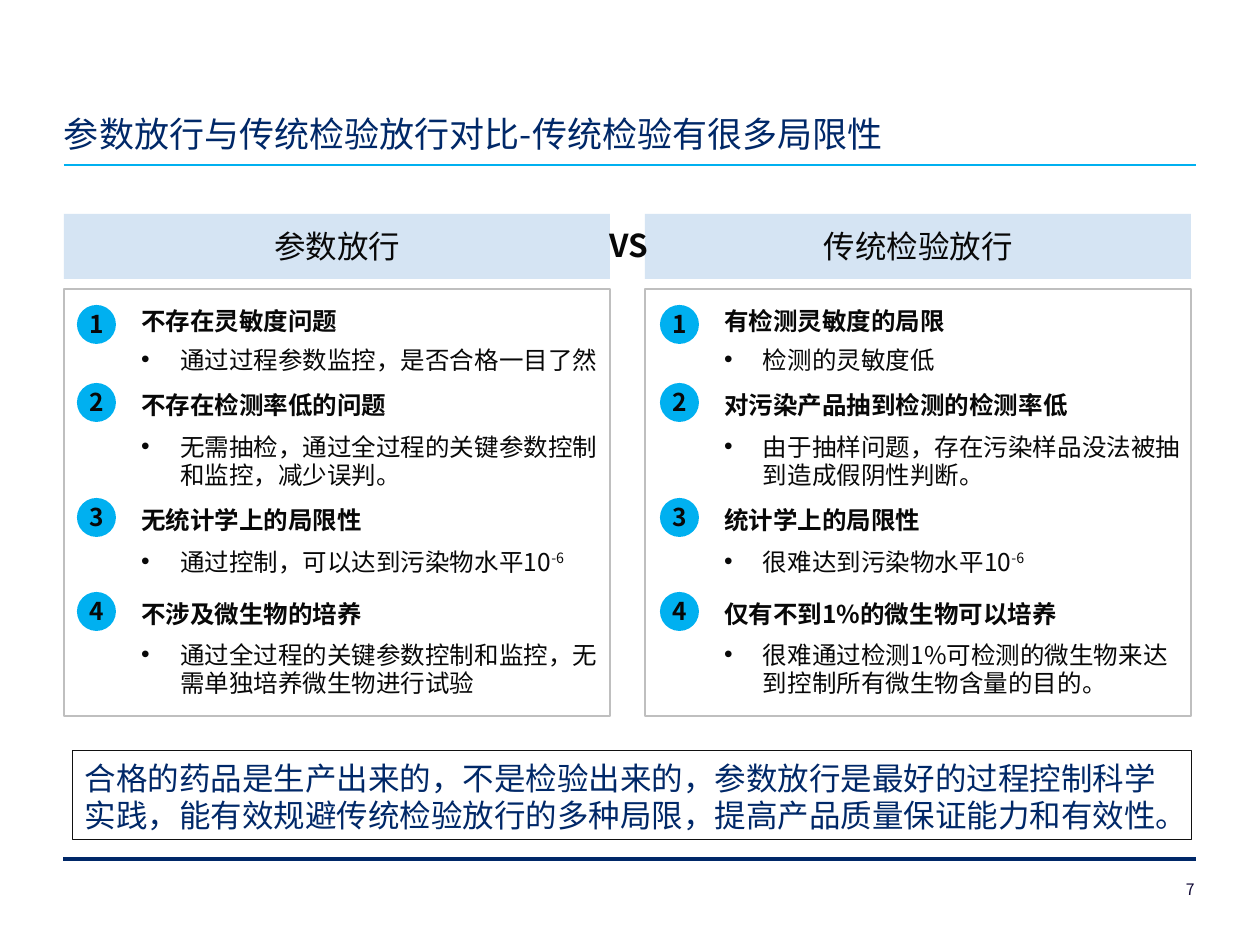
from lxml import etree
from pptx import Presentation
from pptx import util as u
from pptx.dml.color import RGBColor
from pptx.enum import shapes, text
from pptx.oxml.ns import qn

FONT = "Noto Sans CJK SC"
NAVY, CYAN, PALE, GREY, INK = "002868", "00B0F0", "D5E4F3", "BFBFBF", "080808"
TITLE = "参数放行与传统检验放行对比-传统检验有很多局限性"
CLAIM = ("合格的药品是生产出来的，不是检验出来的，参数放行是最好的过程控制科学实践，"
         "能有效规避传统检验放行的多种局限，提高产品质量保证能力和有效性。")

# Each point: heading, detail, superscript
SIDES = [
    ("参数放行", [
        ("不存在灵敏度问题", "通过过程参数监控，是否合格一目了然", ""),
        ("不存在检测率低的问题", "无需抽检，通过全过程的关键参数控制和监控，减少误判。", ""),
        ("无统计学上的局限性", "通过控制，可以达到污染物水平10", "-6"),
        ("不涉及微生物的培养", "通过全过程的关键参数控制和监控，无需单独培养微生物进行试验", ""),
    ]),
    ("传统检验放行", [
        ("有检测灵敏度的局限", "检测的灵敏度低", ""),
        ("对污染产品抽到检测的检测率低", "由于抽样问题，存在污染样品没法被抽到造成假阴性判断。", ""),
        ("统计学上的局限性", "很难达到污染物水平10", "-6"),
        ("仅有不到1%的微生物可以培养", "很难通过检测1%可检测的微生物来达到控制所有微生物含量的目的。", ""),
    ]),
]
BOXES = [64, 645]
BADGES = [77, 660]
# Tops of badge, heading and detail, then height of detail
ROWS = [(305, 294, 336, 47), (383, 378, 423, 69), (498, 493, 538, 49), (592, 587, 631, 59)]
WIDE, INDENT = 546, 39
LEFT, MID = text.PP_ALIGN.LEFT, text.PP_ALIGN.CENTER
TOP, CENTRE, BASE = text.MSO_ANCHOR.TOP, text.MSO_ANCHOR.MIDDLE, text.MSO_ANCHOR.BOTTOM
RECT, OVAL = shapes.MSO_SHAPE.RECTANGLE, shapes.MSO_SHAPE.OVAL


def px(n):
    return u.Emu(round(n * 914400 / 126))


def rgb(code):
    return RGBColor.from_string(code)


def write(shape, words, size=14, color=INK, bold=False, align=LEFT, anchor=CENTRE,
          pads=(5, 5, 5, 5), wrap=True, bullet=False, sup=""):
    frame = shape.text_frame
    form = dict(zip(("margin_left", "margin_top", "margin_right", "margin_bottom"),
                    map(px, pads)))
    form.update(word_wrap=wrap, vertical_anchor=anchor, auto_size=text.MSO_AUTO_SIZE.NONE)
    for key, value in form.items():
        setattr(frame, key, value)
    para = frame.paragraphs[0]
    if bullet:
        props = para._p.get_or_add_pPr()
        props.set("marL", str(px(INDENT)))
        props.set("indent", str(-px(INDENT)))
        etree.SubElement(props, qn("a:buFont")).set("typeface", "Arial")
        etree.SubElement(props, qn("a:buChar")).set("char", "•")
    para.alignment = align
    para.line_spacing = u.Pt(round(size * 1.15, 1))
    for part in filter(None, (words, sup)):
        run = para.add_run()
        run.text = part
        for key, value in dict(name=FONT, size=u.Pt(size), bold=bold).items():
            setattr(run.font, key, value)
        run.font.color.rgb = rgb(color)
        props = run._r.get_or_add_rPr()
        etree.SubElement(props, qn("a:ea")).set("typeface", FONT)
        if part == sup:
            props.set("baseline", "30000")


def place(slide, kind, spot, fill=None, line=None, width=0.75):
    shape = slide.shapes.add_shape(kind, *map(px, spot))
    shape.shadow.inherit = False
    if fill:
        shape.fill.solid()
        shape.fill.fore_color.rgb = rgb(fill)
    else:
        shape.fill.background()
    if line:
        shape.line.color.rgb = rgb(line)
        shape.line.width = u.Pt(width)
    else:
        shape.line.fill.background()
    return shape


def label(slide, spot, words, **form):
    write(slide.shapes.add_textbox(*map(px, spot)), words, **form)


def rule(slide, left, top, color, width):
    line = slide.shapes.add_connector(shapes.MSO_CONNECTOR.STRAIGHT,
                                      *map(px, (left, top, 1196, top)))
    line.line.color.rgb = rgb(color)
    line.line.width = u.Pt(width)
    etree.SubElement(line._element.spPr, qn("a:effectLst"))


def main():
    deck = Presentation()
    deck.slide_width, deck.slide_height = px(1260), px(945)
    slide = deck.slides.add_slide(deck.slide_layouts[5])
    rule(slide, 64, 165, CYAN, 1.5)
    rule(slide, 63, 859, NAVY, 2.25)

    title = slide.shapes.title
    title.left, title.top, title.width, title.height = map(px, (64, 55, 1132, 100))
    write(title, TITLE, size=20, color=NAVY, anchor=BASE, pads=(0, 0, 0, 0))

    for (name, points), box, badge in zip(SIDES, BOXES, BADGES):
        place(slide, RECT, (box, 289, WIDE, 427), line=GREY)
        head = place(slide, RECT, (box, 214, WIDE, 65), fill=PALE)
        write(head, name, size=18, align=MID)
        left = badge + 59
        for num, (point, row) in enumerate(zip(points, ROWS), 1):
            lead, detail, sup = point
            dot, top, low, tall = row
            disc = place(slide, OVAL, (badge, dot, 39, 39), fill=CYAN)
            write(disc, str(num), bold=True, align=MID)
            label(slide, (left, top, 472, 54), lead, bold=True)
            label(slide, (left, low, 472, tall), detail, anchor=TOP,
                  pads=(5, 10, 5, 5), bullet=True, sup=sup)

    label(slide, (566, 183, 126, 126), "VS", size=18, bold=True, align=MID, wrap=False)
    claim = place(slide, RECT, (72, 750, 1119, 89), line="111111", width=0.25)
    write(claim, CLAIM, size=18, color=NAVY, anchor=TOP, pads=(13, 11, 13, 6))
    label(slide, (1186, 881, 32, 19), "7", size=9, color="0E0733", anchor=TOP,
          pads=(0, 0, 0, 0))
    deck.save("out.pptx")


if __name__ == "__main__":
    main()
